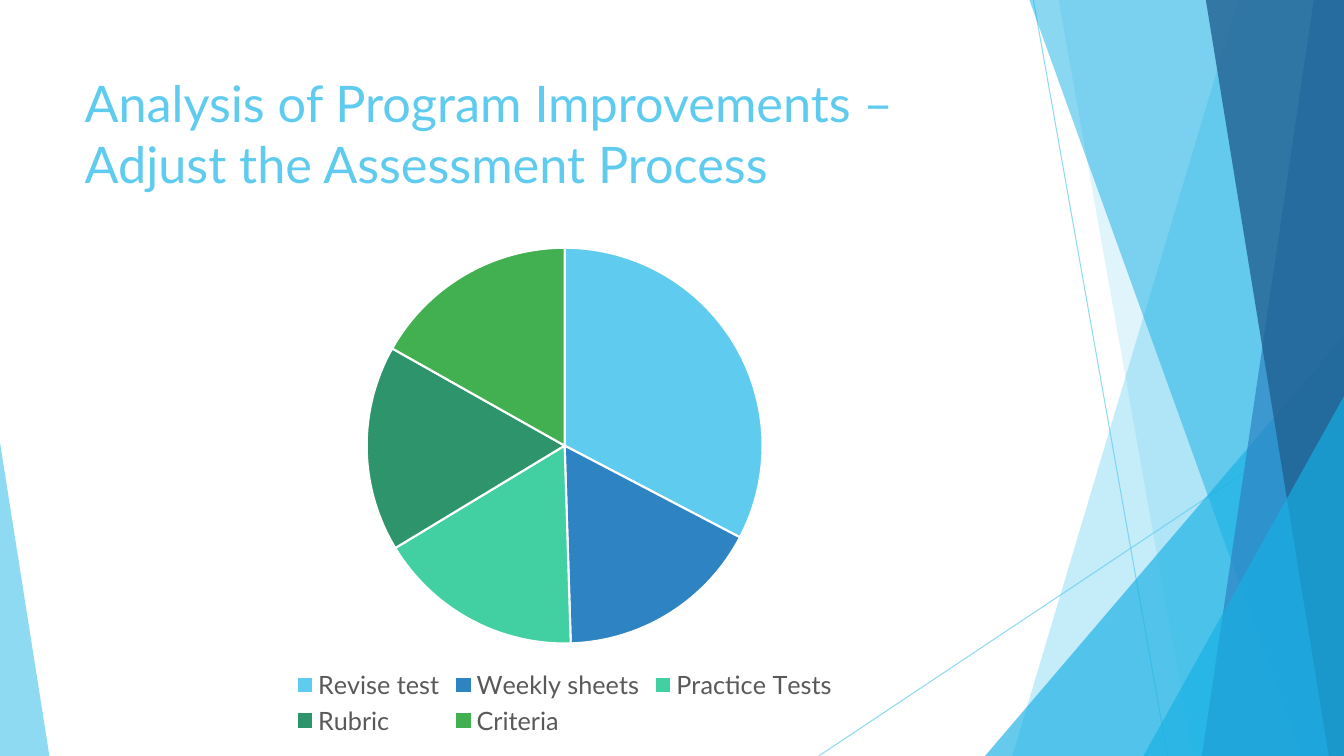
from lxml import etree
from pptx import Presentation
from pptx.chart.data import CategoryChartData
from pptx.dml.color import RGBColor
from pptx.enum.chart import XL_CHART_TYPE, XL_LEGEND_POSITION
from pptx.enum.shapes import MSO_CONNECTOR, MSO_SHAPE
from pptx.enum.text import MSO_ANCHOR, PP_ALIGN
from pptx.oxml.ns import qn
from pptx.util import Inches, Pt

PIE = XL_CHART_TYPE.PIE
LEGEND_BOTTOM = XL_LEGEND_POSITION.BOTTOM
STRAIGHT = MSO_CONNECTOR.STRAIGHT
TRIANGLE = MSO_SHAPE.ISOSCELES_TRIANGLE
TOP = MSO_ANCHOR.TOP
LEFT = PP_ALIGN.LEFT

WIDTH, HEIGHT = 13.33, 7.5
FONT = "Lato"
COLORS = {
    "sky": "5FCBEF",
    "cyan": "17B0E4",
    "blue": "2E83C3",
    "navy": "226292",
    "mint": "42D0A2",
    "teal": "2E946B",
    "green": "42B051",
    "white": "FFFFFF",
    "grey": "595959",
}
SLICES = [
    ("Revise test", 33, "sky"),
    ("Weekly sheets", 17, "blue"),
    ("Practice Tests", 17, "mint"),
    ("Rubric", 17, "teal"),
    ("Criteria", 17, "green"),
]


def rgb(name):
    """Return the named palette colour."""
    return RGBColor.from_string(COLORS[name])


def set_opacity(fill_owner, percent):
    """Make the solid fill of a shape or line partly transparent."""
    color = next(fill_owner.iter(qn("a:srgbClr")))
    etree.SubElement(color, qn("a:alpha"), val=str(percent * 1000))


def paint(shape, color, opacity):
    """Give a decorative shape a flat translucent fill."""
    shape.shadow.inherit = False
    shape.fill.solid()
    shape.fill.fore_color.rgb = rgb(color)
    shape.line.fill.background()
    set_opacity(shape._element.spPr, opacity)


def add_thin_line(page, start, end):
    """Draw a fine translucent line between two points."""
    line = page.shapes.add_connector(STRAIGHT, *map(Inches, start + end))
    line.line.color.rgb = rgb("sky")
    line.line.width = Pt(0.75)
    properties = line._element.spPr
    set_opacity(properties, 70)
    etree.SubElement(properties, qn("a:effectLst"))


def add_band(page, box, top_x, bottom_x, color, opacity):
    """Draw a band from a slanted left edge to the right side of the box."""
    left, top, width, height = box
    right, bottom = left + width, top + height
    builder = page.shapes.build_freeform(Inches(top_x), Inches(top))
    corners = [(right, top), (right, bottom), (bottom_x, bottom)]
    builder.add_line_segments([(Inches(x), Inches(y)) for x, y in corners])
    paint(builder.convert_to_shape(), color, opacity)


def add_triangle(page, box, apex, color, opacity):
    """Draw a right triangle with its apex at the given share of the width."""
    triangle = page.shapes.add_shape(TRIANGLE, *map(Inches, box))
    triangle.adjustments[0] = apex
    paint(triangle, color, opacity)


def add_decoration(page, box):
    """Layer the facets along both edges of the box."""
    left, top, width, height = box
    right, bottom = left + width, top + height

    def corner(size_x, size_y):
        return right - size_x, bottom - size_y, size_x, size_y

    add_thin_line(page, (10.25, top), (11.58, bottom))
    add_thin_line(page, (right, 4.03), (8.12, bottom))
    add_band(page, box, 12.28, 10.04, "sky", 36)
    add_band(page, box, 10.5, 11.83, "sky", 20)
    add_triangle(page, corner(3.56, 4.17), 1, "cyan", 66)
    add_band(page, box, 10.21, 12.91, "cyan", 50)
    add_band(page, box, 13.03, 11.92, "blue", 70)
    add_band(page, box, 11.96, 13.18, "navy", 80)
    add_triangle(page, corner(1.99, 3.57), 1, "cyan", 66)
    add_triangle(page, (left, bottom - 3.11, 0.49, 3.11), 0, "sky", 70)


def add_title(page, box, text):
    """Write the slide title in the box."""
    frame = page.shapes.add_textbox(*map(Inches, box)).text_frame
    frame.word_wrap = True
    frame.vertical_anchor = TOP
    frame.text = text
    para = frame.paragraphs[0]
    para.alignment = LEFT
    span = para.runs[0]
    span.font.name = FONT
    span.font.size = Pt(36)
    span.font.color.rgb = rgb("sky")


def add_pie(page, box):
    """Chart the improvements as a pie with a legend below."""
    data = CategoryChartData()
    data.categories = [name for name, _, _ in SLICES]
    data.add_series("Series 1", [value for _, value, _ in SLICES])
    chart = page.shapes.add_chart(PIE, *map(Inches, box), data).chart
    chart.has_title = False
    chart.font.name = FONT
    chart.font.size = Pt(10)
    chart.has_legend = True
    legend = chart.legend
    legend.position = LEGEND_BOTTOM
    legend.include_in_layout = False
    legend.font.name = FONT
    legend.font.size = Pt(18)
    legend.font.color.rgb = rgb("grey")
    plot = chart.plots[0]
    plot.vary_by_categories = True
    for index, (_, _, color) in enumerate(SLICES):
        style = plot.series[0].points[index].format
        style.fill.solid()
        style.fill.fore_color.rgb = rgb(color)
        style.line.color.rgb = rgb("white")
        style.line.width = Pt(1.5)


def main():
    """Build and save the deck."""
    deck = Presentation()
    deck.slide_width, deck.slide_height = Inches(WIDTH), Inches(HEIGHT)
    page = deck.slides.add_slide(deck.slide_layouts[6])
    page.background.fill.solid()
    page.background.fill.fore_color.rgb = rgb("white")
    add_decoration(page, (0, 0, WIDTH, HEIGHT))
    add_title(page, (0.74, 0.67, 9.51, 1.34),
              "Analysis of Program Improvements – Adjust the Assessment Process")
    add_pie(page, (0.59, 2.32, 10.02, 5.03))
    deck.save("out.pptx")


if __name__ == "__main__":
    main()
